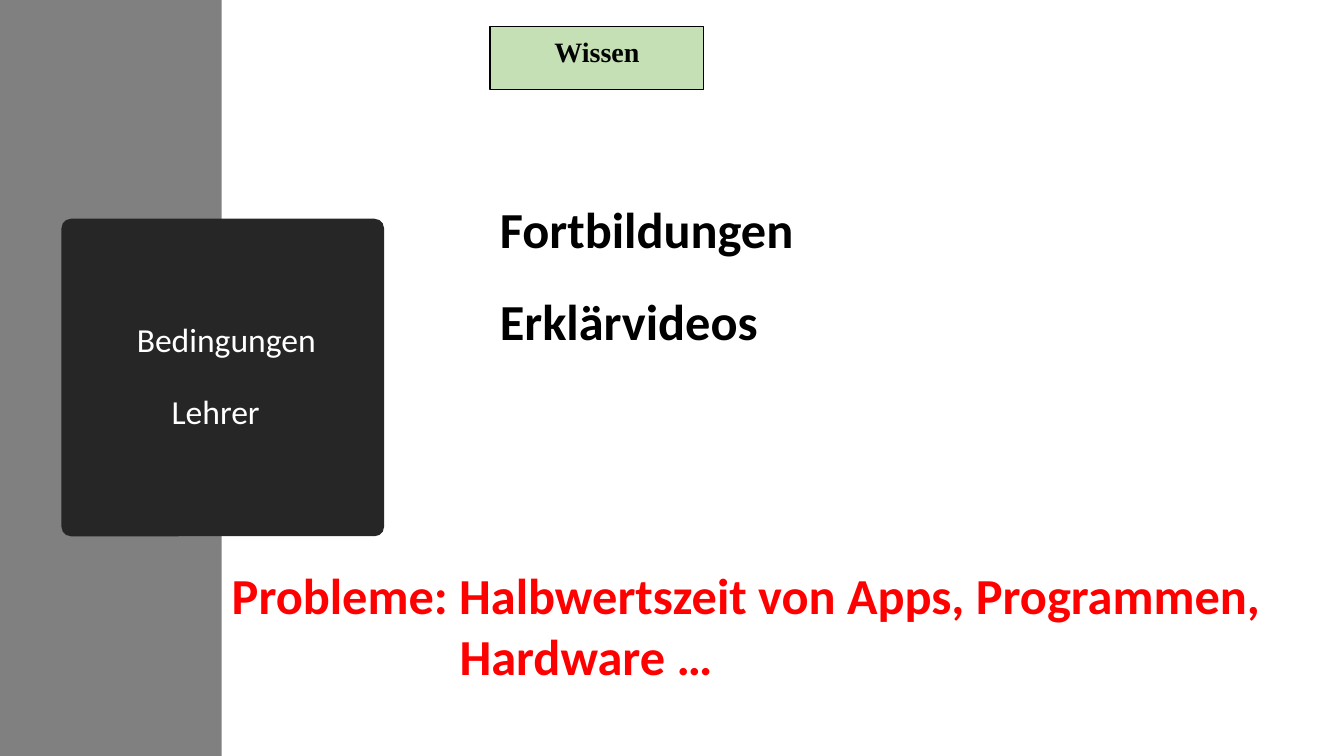
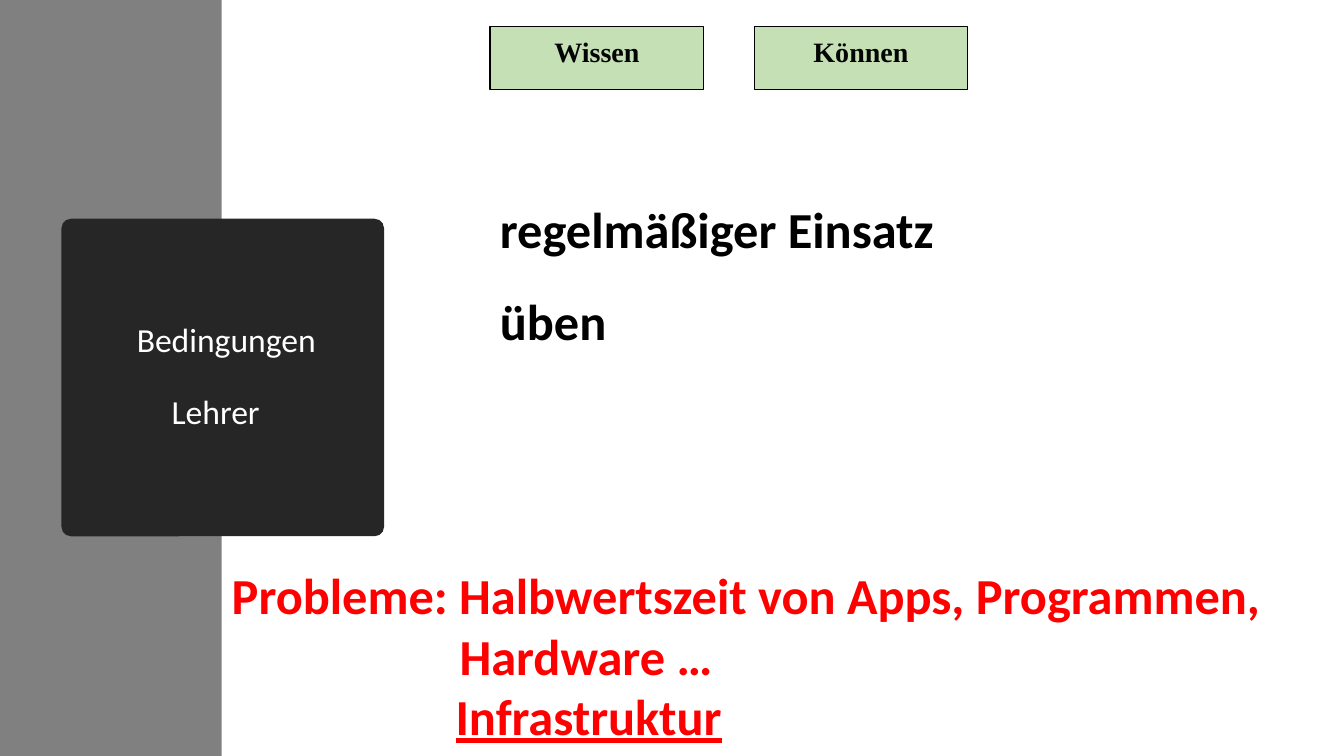
from pptx import Presentation
from pptx.dml.color import RGBColor
from pptx.enum.shapes import MSO_SHAPE
from pptx.enum.text import MSO_ANCHOR, PP_ALIGN
from pptx.util import Inches, Pt

RECT, ROUND = MSO_SHAPE.RECTANGLE, MSO_SHAPE.ROUNDED_RECTANGLE
TOP, MIDDLE = MSO_ANCHOR.TOP, MSO_ANCHOR.MIDDLE
LEFT, CENTER = PP_ALIGN.LEFT, PP_ALIGN.CENTER
COLORS = {"band": "808080", "panel": "262626", "tab": "C5E0B4", "line": "000000",
          "label": "040404", "white": "FFFFFF", "text": "000000", "alert": "FF0000"}
SANS, SERIF = "Calibri", "Times New Roman"
WIDTH, HEIGHT = 13.33, 7.5
BAND = 2.2
TITLE = [("Bedingungen", 0.07, 0), ("Lehrer", 0, 0.14)]
ISSUES = [("Probleme: Halbwertszeit von Apps, Programmen,", 0, False),
          ("Hardware …", 2.26, False),
          ("Infrastruktur", 2.22, True)]
SLIDES = [(["Wissen"], ["Fortbildungen", "Erklärvideos"], ISSUES[:2]),
          (["Wissen", "Können"], ["regelmäßiger Einsatz", "üben"], ISSUES)]


def color(name):
    """Return the named colour."""
    return RGBColor.from_string(COLORS[name])


def add_block(slide, kind, box, fill, line=None):
    """Add a filled shape in the box."""
    shape = slide.shapes.add_shape(kind, *map(Inches, box))
    shape.shadow.inherit = False
    shape.fill.solid()
    shape.fill.fore_color.rgb = color(fill)
    if line:
        shape.line.color.rgb = color(line)
        shape.line.width = Pt(0.75)
    else:
        shape.line.fill.background()
    return shape


def set_frame(shape, anchor):
    """Make the text wrap at the given anchor and return its frame."""
    frame = shape.text_frame
    frame.word_wrap = True
    frame.vertical_anchor = anchor
    return frame


def add_line(frame, index, text, size, tint, face=SANS, bold=True, align=LEFT,
             left=0, right=0, under=False):
    """Write one paragraph with its margins and return it."""
    para = frame.add_paragraph() if index else frame.paragraphs[0]
    props = para._p.get_or_add_pPr()
    props.set("marL", str(Inches(left)))
    props.set("marR", str(Inches(right)))
    para.alignment = align
    run = para.add_run()
    run.text = text
    font = run.font
    font.name, font.size, font.bold = face, Pt(size), bold
    font.color.rgb = color(tint)
    if under:
        font.underline = True
    return para


def add_panel(slide, box):
    """Add the dark title panel."""
    panel = add_block(slide, ROUND, box, "panel")
    panel.adjustments[0] = 0.03
    frame = set_frame(panel, MIDDLE)
    for index, (text, left, right) in enumerate(TITLE):
        para = add_line(frame, index, text, 24, "white", bold=False,
                        align=CENTER, left=left, right=right)
        para.line_spacing = 0.9
        if index:
            para.space_before = Pt(25)


def add_tabs(slide, box, names):
    """Add a row of green labels, starting at the box."""
    left, top, width, height = box
    for index, name in enumerate(names):
        spot = (left + index * (width + 0.5), top, width, height)
        frame = set_frame(add_block(slide, RECT, spot, "tab", "line"), MIDDLE)
        frame.margin_bottom = Inches(0.18)
        add_line(frame, 0, name, 20, "label", face=SERIF, align=CENTER)


def add_points(slide, box, points):
    """Add the main points one below the other, starting at the box."""
    left, top, width, height = box
    for index, text in enumerate(points):
        spot = (left, top + index * (height + 0.2), width, height)
        area = slide.shapes.add_textbox(*map(Inches, spot))
        add_line(set_frame(area, TOP), 0, text, 36, "text")


def add_issues(slide, box, issues):
    """Add the red list of problems."""
    area = slide.shapes.add_textbox(*map(Inches, box))
    frame = set_frame(area, TOP)
    for index, (text, left, under) in enumerate(issues):
        add_line(frame, index, text, 36, "alert", left=left, under=under)


def add_page(deck, tabs, points, issues):
    """Add one slide with band, panel, labels, points and problems."""
    slide = deck.slides.add_slide(deck.slide_layouts[6])
    add_block(slide, RECT, (0, 0, BAND, HEIGHT), "band")
    add_panel(slide, (0.61, 2.17, 3.2, 3.15))
    add_tabs(slide, (4.86, 0.26, 2.12, 0.63), tabs)
    add_points(slide, (4.86, 1.92, 7.13, 0.71), points)
    add_issues(slide, (BAND, 5.55, 10.88, 0.1 + 0.61 * len(issues)), issues)


def main():
    """Build and save the deck."""
    deck = Presentation()
    deck.slide_width, deck.slide_height = Inches(WIDTH), Inches(HEIGHT)
    for page in SLIDES:
        add_page(deck, *page)
    deck.save("out.pptx")


if __name__ == "__main__":
    main()
